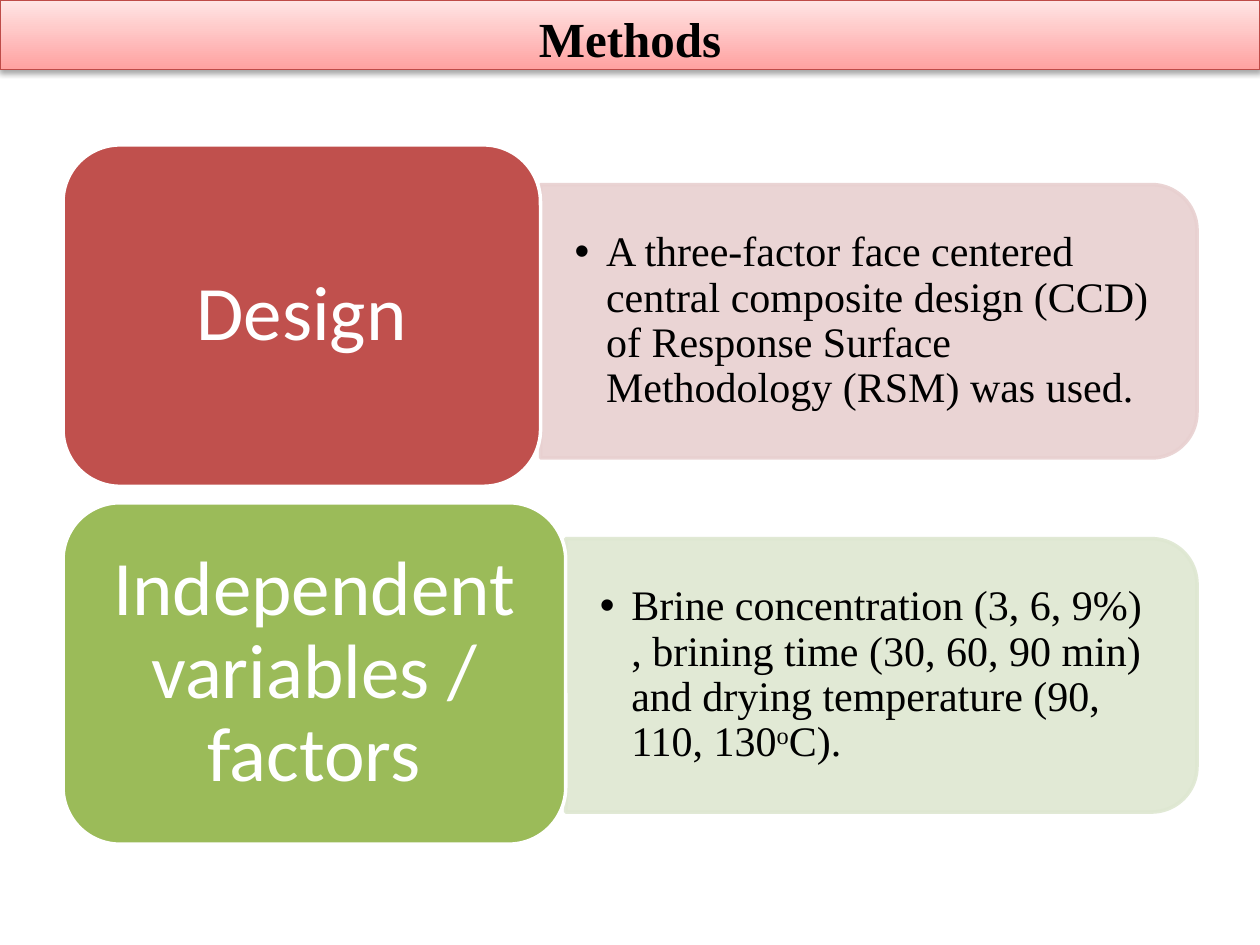
from lxml import etree
from pptx import Presentation
from pptx.dml.color import RGBColor
from pptx.enum.shapes import MSO_SHAPE
from pptx.enum.text import MSO_ANCHOR, MSO_AUTO_SIZE, PP_ALIGN
from pptx.oxml.ns import qn
from pptx.util import Inches, Pt

ROUNDED = MSO_SHAPE.ROUNDED_RECTANGLE
ROUNDED_END = MSO_SHAPE.ROUND_2_SAME_RECTANGLE
MIDDLE = MSO_ANCHOR.MIDDLE
CENTER, LEFT = PP_ALIGN.CENTER, PP_ALIGN.LEFT
NO_AUTOFIT = MSO_AUTO_SIZE.NONE

BLACK = RGBColor(0x00, 0x00, 0x00)
WHITE = RGBColor(0xFF, 0xFF, 0xFF)
RED = RGBColor(0xC0, 0x50, 0x4D)
PALE_RED = RGBColor(0xE8, 0xD0, 0xD0)
GREEN = RGBColor(0x9B, 0xBB, 0x59)
PALE_GREEN = RGBColor(0xDE, 0xE7, 0xD1)
BANNER_TOP = RGBColor(0xFF, 0xE5, 0xE5)
BANNER_BOTTOM = RGBColor(0xFF, 0xA2, 0xA1)
BANNER_EDGE = RGBColor(0xBE, 0x4B, 0x48)

SERIF, SANS = "Times New Roman", "Calibri"
CARD_LEFT, CARD_HEIGHT = 0.5, 2.71
PANEL_RIGHT, PANEL_HEIGHT = 9.5, 2.17
LIST_HEIGHT, LIST_MARGIN = 1.95, 0.1


class MethodsSlide:
    def __init__(self, slide):
        self.slide = slide
        self.shapes = slide.shapes

    def place(self, shape, left, top, width, height):
        shape.left, shape.top = Inches(left), Inches(top)
        shape.width, shape.height = Inches(width), Inches(height)

    def frame(self, shape, side, end):
        frame = shape.text_frame
        frame.word_wrap = True
        frame.auto_size = NO_AUTOFIT
        frame.vertical_anchor = MIDDLE
        frame.margin_left = frame.margin_right = Inches(side)
        frame.margin_top = frame.margin_bottom = Inches(end)
        return frame

    def style(self, paragraph, font, size, color, align, bold=False):
        paragraph.alignment = align
        paragraph.space_before = Pt(0)
        for run in paragraph.runs:
            run.font.name = font
            run.font.size = Pt(size)
            run.font.bold = bold
            run.font.color.rgb = color

    def block(self, kind, left, top, width, height, fill, line):
        shape = self.shapes.add_shape(
            kind, Inches(left), Inches(top), Inches(width), Inches(height))
        shape.shadow.inherit = False
        shape.fill.solid()
        shape.fill.fore_color.rgb = fill
        shape.line.color.rgb = line
        shape.line.width = Pt(2)
        return shape

    def banner(self, text):
        title = self.shapes.title
        self.place(title, 0, 0, 10, 0.55)
        title.fill.gradient()
        title.fill.gradient_angle = 270
        for stop, color in zip(title.fill.gradient_stops, (BANNER_TOP, BANNER_BOTTOM)):
            stop.color.rgb = color
        title.line.color.rgb = BANNER_EDGE
        title.line.width = Pt(0.75)
        title.shadow.inherit = False
        effects = title._element.spPr.find(qn("a:effectLst"))
        shadow = etree.SubElement(effects, qn("a:outerShdw"), blurRad="40000",
                                  dist="23000", dir="5400000", rotWithShape="0")
        black = etree.SubElement(shadow, qn("a:srgbClr"), val="000000")
        etree.SubElement(black, qn("a:alpha"), val="35000")
        frame = self.frame(title, 0.1, 0)
        frame.margin_top = Inches(0.06)
        frame.text = text
        self.style(frame.paragraphs[0], SERIF, 28, BLACK, CENTER, bold=True)

    def panel(self, left, middle, color):
        length = PANEL_RIGHT - left
        center = (PANEL_RIGHT + left) / 2
        panel = self.block(ROUNDED_END, center - PANEL_HEIGHT / 2, middle - length / 2,
                           PANEL_HEIGHT, length, color, color)
        panel.rotation = 90
        for tint in panel._element.spPr.iter(qn("a:srgbClr")):
            etree.SubElement(tint, qn("a:alpha"), val="90000")

    def bullet(self, body, left, middle, pieces):
        self.shapes._spTree.append(body._element)
        self.place(body, left, middle - LIST_HEIGHT / 2,
                   PANEL_RIGHT - left - LIST_MARGIN, LIST_HEIGHT)
        paragraph = self.frame(body, 0.27, 0.14).paragraphs[0]
        for text, raised in pieces:
            run = paragraph.add_run()
            run.text = text
            if raised:
                run.font._element.set("baseline", "30000")
        self.style(paragraph, SERIF, 24, BLACK, LEFT)
        paragraph.line_spacing = 0.9
        properties = paragraph._p.get_or_add_pPr()
        properties.set("marL", str(Inches(0.25)))
        properties.set("indent", str(-Inches(0.25)))

    def card(self, top, width, text, color):
        card = self.block(ROUNDED, CARD_LEFT, top, width, CARD_HEIGHT, color, WHITE)
        frame = self.frame(card, 0.18, 0.09)
        frame.text = text
        self.style(frame.paragraphs[0], SANS, 44, WHITE, CENTER)
        frame.paragraphs[0].line_spacing = 0.9


def main():
    deck = Presentation()
    deck.slide_width, deck.slide_height = Inches(10), Inches(7.5)
    page = MethodsSlide(deck.slides.add_slide(deck.slide_layouts[3]))
    page.banner("Methods")
    design = [("A three-factor face centered central composite design (CCD) "
               "of Response Surface Methodology (RSM) was used.", False)]
    factors = [("Brine concentration (3, 6, 9%) , brining time (30, 60, 90 min) "
                "and drying temperature (90, 110, 130", False), ("o", True), ("C).", False)]
    rows = [
        ("Design", design, 1.15, 3.79, 2.55, RED, PALE_RED),
        ("Independent variables / factors", factors, 3.99, 3.99, 5.36, GREEN, PALE_GREEN),
    ]
    bodies = list(page.slide.placeholders)[1:]
    for body, (heading, pieces, top, width, middle, color, pale) in zip(bodies, rows):
        left = CARD_LEFT + width
        page.panel(left, middle, pale)
        page.bullet(body, left, middle, pieces)
        page.card(top, width, heading, color)
    deck.save("out.pptx")


if __name__ == "__main__":
    main()
